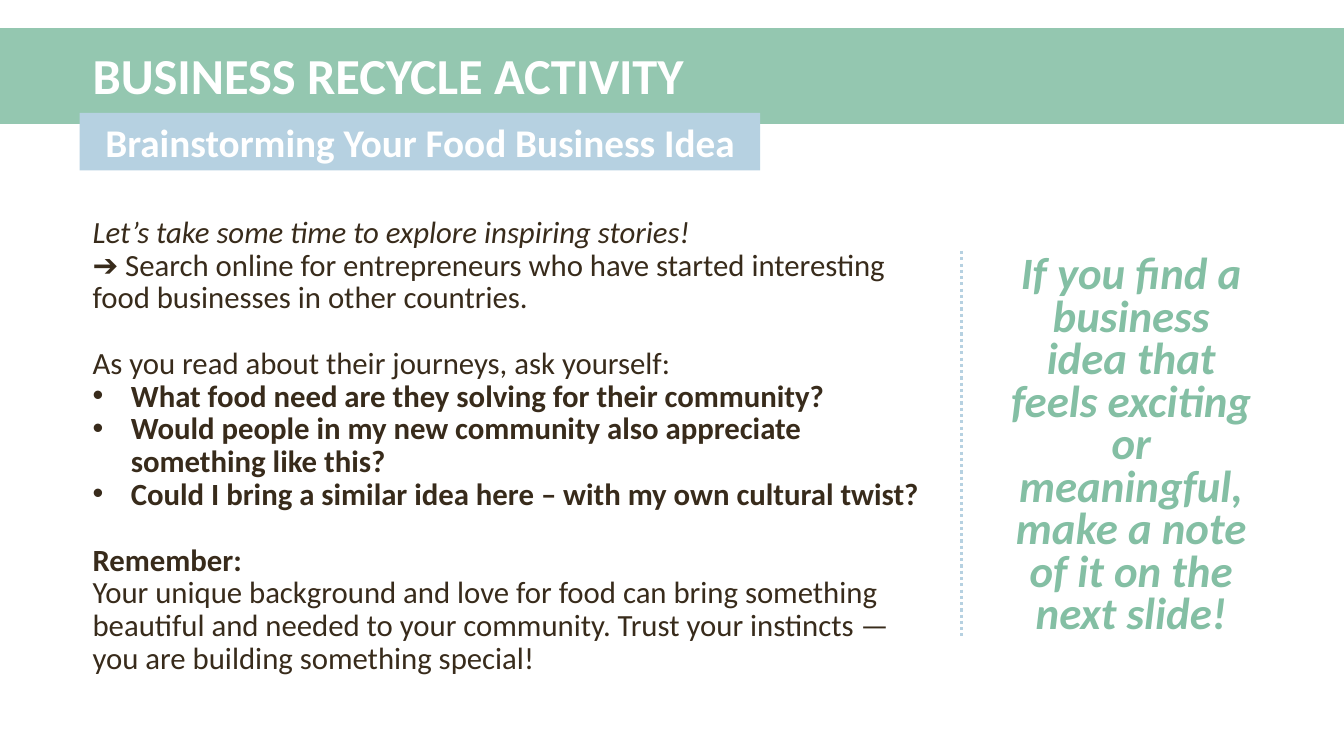
from pptx import Presentation
from pptx.dml.color import RGBColor
from pptx.enum.dml import MSO_LINE
from pptx.enum.shapes import MSO_CONNECTOR, MSO_SHAPE
from pptx.enum.text import MSO_ANCHOR, PP_ALIGN
from pptx.oxml.ns import qn
from pptx.util import Inches, Pt
from lxml import etree

RECTANGLE = MSO_SHAPE.RECTANGLE
STRAIGHT = MSO_CONNECTOR.STRAIGHT
DOTTED = MSO_LINE.ROUND_DOT
TOP, MIDDLE = MSO_ANCHOR.TOP, MSO_ANCHOR.MIDDLE
LEFT, CENTER = PP_ALIGN.LEFT, PP_ALIGN.CENTER

THEME = {
    "font": "Calibri",
    "band": "94C7B0", "label": "B6D1E1", "accent": "84BFA4",
    "dark": "382B1B", "white": "FFFFFF",
    "title": 36, "subtitle": 28, "body": 22, "callout": 32,
    "body_line": 23.4, "callout_line": 30.4,
}

TITLE = "BUSINESS RECYCLE ACTIVITY"
SUBTITLE = "Brainstorming Your Food Business Idea"
CALLOUT = ("If you find a business idea that feels exciting or meaningful, "
           "make a note of it on the next slide!")
BODY = [
    {"text": "Let’s take some time to explore inspiring stories!", "italic": True},
    {"text": "➔ Search online for entrepreneurs who have started interesting "
             "food businesses in other countries."},
    {"text": "As you read about their journeys, ask yourself:", "gap": True},
    {"text": "What food need are they solving for their community?",
     "bold": True, "bullet": True},
    {"text": "Would people in my new community also appreciate something like this?",
     "bold": True, "bullet": True},
    {"text": "Could I bring a similar idea here – with my own cultural twist?",
     "bold": True, "bullet": True},
    {"text": "Remember:", "bold": True, "gap": True},
    {"text": "Your unique background and love for food can bring something "
             "beautiful and needed to your community. Trust your instincts — "
             "you are building something special!"},
]

PAGE_WIDTH, PAGE_HEIGHT = 13.33, 7.5
BAND_AREA = (0, 0.28, PAGE_WIDTH, 0.95)
TITLE_AREA = (0.82, 0.34, 11.93, 0.79)
SUBTITLE_AREA = (0.79, 1.12, 6.75, 0.57)
BODY_AREA = (0.82, 2.1, 8.45, 4.59)
CALLOUT_AREA = (9.9, 2.49, 2.64, 3.82)
DIVIDER_X = 9.54
BULLET_INDENT = 0.38


def color(name):
    return RGBColor.from_string(THEME[name])


def add_bullet(para):
    properties = para._p.get_or_add_pPr()
    properties.set("marL", str(Inches(BULLET_INDENT)))
    properties.set("indent", str(-Inches(BULLET_INDENT)))
    font = etree.SubElement(properties, qn("a:buFont"))
    font.set("typeface", "Arial")
    etree.SubElement(properties, qn("a:buChar")).set("char", "•")


def write(box, items, size, ink, anchor=TOP, align=LEFT, line=None):
    frame = box.text_frame
    frame.word_wrap = True
    frame.vertical_anchor = anchor
    for index, item in enumerate(items):
        para = frame.paragraphs[0] if index == 0 else frame.add_paragraph()
        para.alignment = align
        if line:
            para.line_spacing = Pt(THEME[line])
        if item.get("gap"):
            para.space_before = Pt(THEME[line])
        if item.get("bullet"):
            add_bullet(para)
        span = para.add_run()
        span.text = item["text"]
        span.font.name = THEME["font"]
        span.font.size = Pt(THEME[size])
        span.font.color.rgb = color(ink)
        span.font.bold = item.get("bold", False)
        span.font.italic = item.get("italic", False)


def add_block(page, area, fill):
    block = page.shapes.add_shape(RECTANGLE, *map(Inches, area))
    block.shadow.inherit = False
    block.fill.solid()
    block.fill.fore_color.rgb = color(fill)
    block.line.fill.background()
    return block


def add_text(page, area, *args, **options):
    write(page.shapes.add_textbox(*map(Inches, area)), *args, **options)


def add_divider(page):
    top, height = CALLOUT_AREA[1], CALLOUT_AREA[3]
    divider = page.shapes.add_connector(
        STRAIGHT, Inches(DIVIDER_X), Inches(top),
        Inches(DIVIDER_X), Inches(top + height))
    divider.line.color.rgb = color("label")
    divider.line.width = Pt(2.25)
    divider.line.dash_style = DOTTED
    etree.SubElement(divider._element.spPr, qn("a:effectLst"))


def main():
    deck = Presentation()
    deck.slide_width = Inches(PAGE_WIDTH)
    deck.slide_height = Inches(PAGE_HEIGHT)
    page = deck.slides.add_slide(deck.slide_layouts[6])
    add_block(page, BAND_AREA, "band")
    add_text(page, TITLE_AREA, [{"text": TITLE, "bold": True}],
             "title", "white", anchor=MIDDLE)
    add_text(page, BODY_AREA, BODY, "body", "dark", line="body_line")
    add_text(page, CALLOUT_AREA, [{"text": CALLOUT, "bold": True, "italic": True}],
             "callout", "accent", align=CENTER, line="callout_line")
    label = add_block(page, SUBTITLE_AREA, "label")
    write(label, [{"text": SUBTITLE, "bold": True}],
          "subtitle", "white", anchor=MIDDLE, align=CENTER)
    add_divider(page)
    deck.save("out.pptx")


if __name__ == "__main__":
    main()
